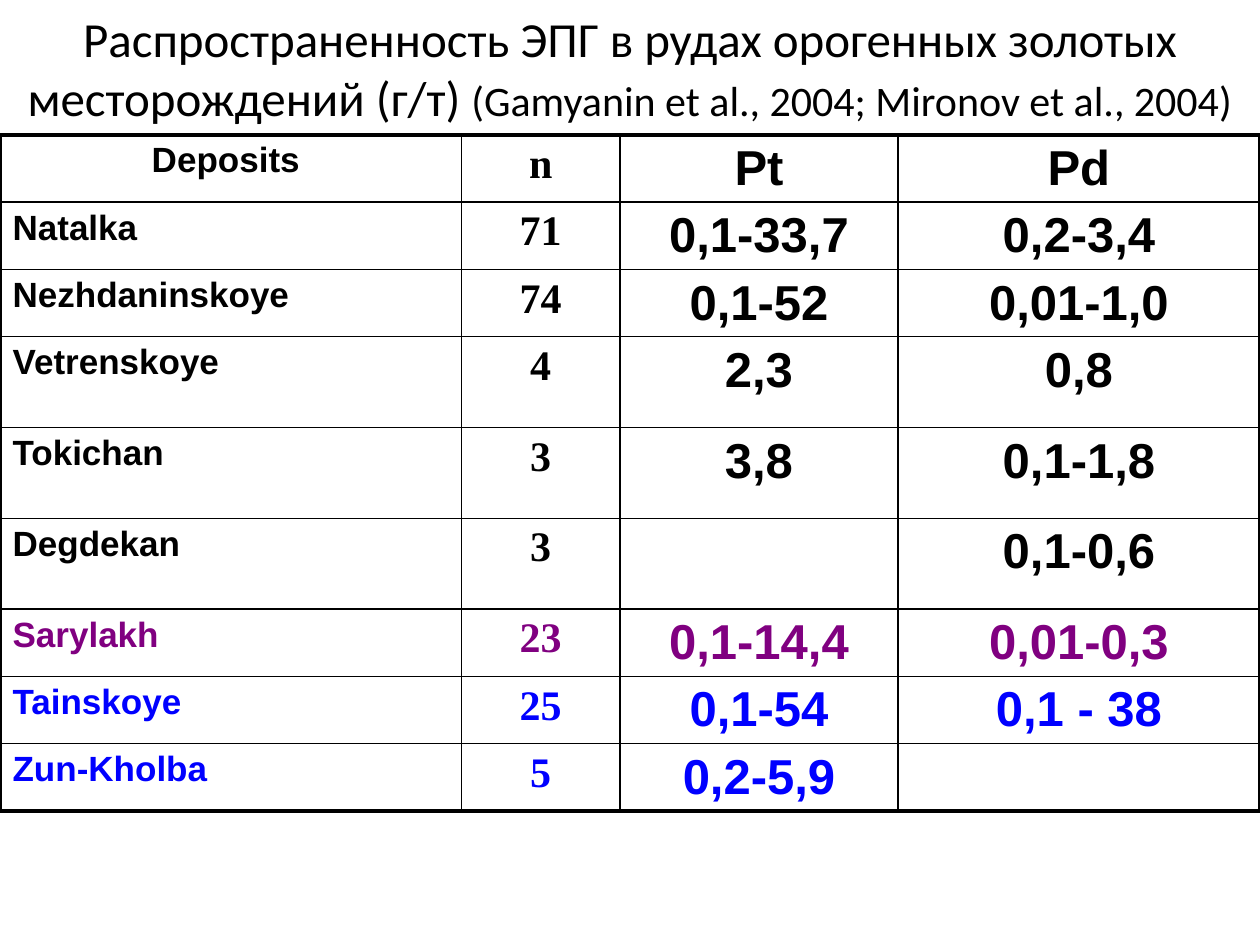
from lxml import etree
from pptx import Presentation
from pptx.dml.color import RGBColor
from pptx.enum.text import MSO_ANCHOR, MSO_AUTO_SIZE, PP_ALIGN
from pptx.oxml.ns import qn
from pptx.util import Cm, Pt

LEFT, CENTER = PP_ALIGN.LEFT, PP_ALIGN.CENTER
MIDDLE = MSO_ANCHOR.MIDDLE
NO_AUTOFIT = MSO_AUTO_SIZE.NONE
TITLE_ONLY = 5
WIDTH, HEIGHT = 25.4, 19.05
TITLE_HEIGHT = 2.72
THICK, THIN = 2.25, 1

COLORS = {"black": "000000", "purple": "800080", "blue": "0000FF"}

TITLE = [
    ("Распространенность ЭПГ в рудах орогенных золотых месторождений (г/т) ", 28),
    ("(Gamyanin et al., 2004; Mironov et al., 2004)", 24),
]
COLUMNS = [
    (9.3, "Arial", 20, LEFT),
    (3.2, "Times New Roman", 24, CENTER),
    (5.6, "Arial", 28, CENTER),
    (7.3, "Arial", 28, CENTER),
]
LOW, TALL = 1.35, 1.83
ROWS = [
    (LOW, "black", ["Deposits ", "n", "Pt", "Pd"]),
    (LOW, "black", ["Natalka", "71", "0,1-33,7", "0,2-3,4"]),
    (LOW, "black", ["Nezhdaninskoye", "74", "0,1-52", "0,01-1,0"]),
    (TALL, "black", ["Vetrenskoye", "4", "2,3", "0,8"]),
    (TALL, "black", ["Tokichan", "3", "3,8", "0,1-1,8"]),
    (TALL, "black", ["Degdekan", "3", "", "0,1-0,6"]),
    (LOW, "purple", ["Sarylakh", "23", "0,1-14,4", "0,01-0,3"]),
    (LOW, "blue", ["Tainskoye", "25", "0,1-54", "0,1 - 38"]),
    (LOW, "blue", ["Zun-Kholba", "5", "0,2-5,9", ""]),
]


class DepositSlide:
    def __init__(self, presentation):
        layout = presentation.slide_layouts[TITLE_ONLY]
        self.slide = presentation.slides.add_slide(layout)

    def color(self, name):
        return RGBColor.from_string(COLORS[name])

    def title(self, parts):
        shape = self.slide.shapes.title
        shape.left, shape.top = Cm(0), Cm(0)
        shape.width, shape.height = Cm(WIDTH), Cm(TITLE_HEIGHT)
        frame = shape.text_frame
        frame.word_wrap = True
        frame.auto_size = NO_AUTOFIT
        frame.vertical_anchor = MIDDLE
        paragraph = frame.paragraphs[0]
        paragraph.alignment = CENTER
        paragraph.font.name = "Calibri"
        paragraph.font.color.rgb = self.color("black")
        for text, size in parts:
            run = paragraph.add_run()
            run.text = text
            run.font.size = Pt(size)

    def borders(self, cell, widths):
        properties = cell._tc.get_or_add_tcPr()
        for index, (side, width) in enumerate(widths.items()):
            line = etree.Element(qn(f"a:ln{side}"), w=str(Pt(width)))
            fill = etree.SubElement(line, qn("a:solidFill"))
            etree.SubElement(fill, qn("a:srgbClr"), val=COLORS["black"])
            properties.insert(index, line)

    def cell_text(self, cell, text, font_name, size, color, alignment):
        paragraph = cell.text_frame.paragraphs[0]
        paragraph.text = text
        paragraph.alignment = alignment
        font = paragraph.font
        font.name, font.size, font.bold = font_name, Pt(size), True
        font.color.rgb = self.color(color)

    def table(self, columns, rows):
        height = sum(row[0] for row in rows)
        table = self.slide.shapes.add_table(
            len(rows), len(columns), Cm(0), Cm(TITLE_HEIGHT), Cm(WIDTH), Cm(height)
        ).table
        table.first_row = table.horz_banding = False
        for column, (width, *_) in zip(table.columns, columns):
            column.width = Cm(width)
        last_row, last_column = len(rows) - 1, len(columns) - 1
        for r, (row_height, color, texts) in enumerate(rows):
            table.rows[r].height = Cm(row_height)
            for c, (text, column) in enumerate(zip(texts, columns)):
                _, font_name, size, alignment = column
                cell = table.cell(r, c)
                cell.fill.background()
                self.borders(cell, {
                    "L": THICK if c == 0 else THIN,
                    "R": THICK if c == last_column else THIN,
                    "T": THICK if r == 0 else THIN,
                    "B": THICK if r == last_row else THIN,
                })
                if text:
                    self.cell_text(cell, text, font_name, size, color,
                                   CENTER if r == 0 else alignment)


def main():
    presentation = Presentation()
    presentation.slide_width, presentation.slide_height = Cm(WIDTH), Cm(HEIGHT)
    slide = DepositSlide(presentation)
    slide.title(TITLE)
    slide.table(COLUMNS, ROWS)
    presentation.save("out.pptx")


if __name__ == "__main__":
    main()
